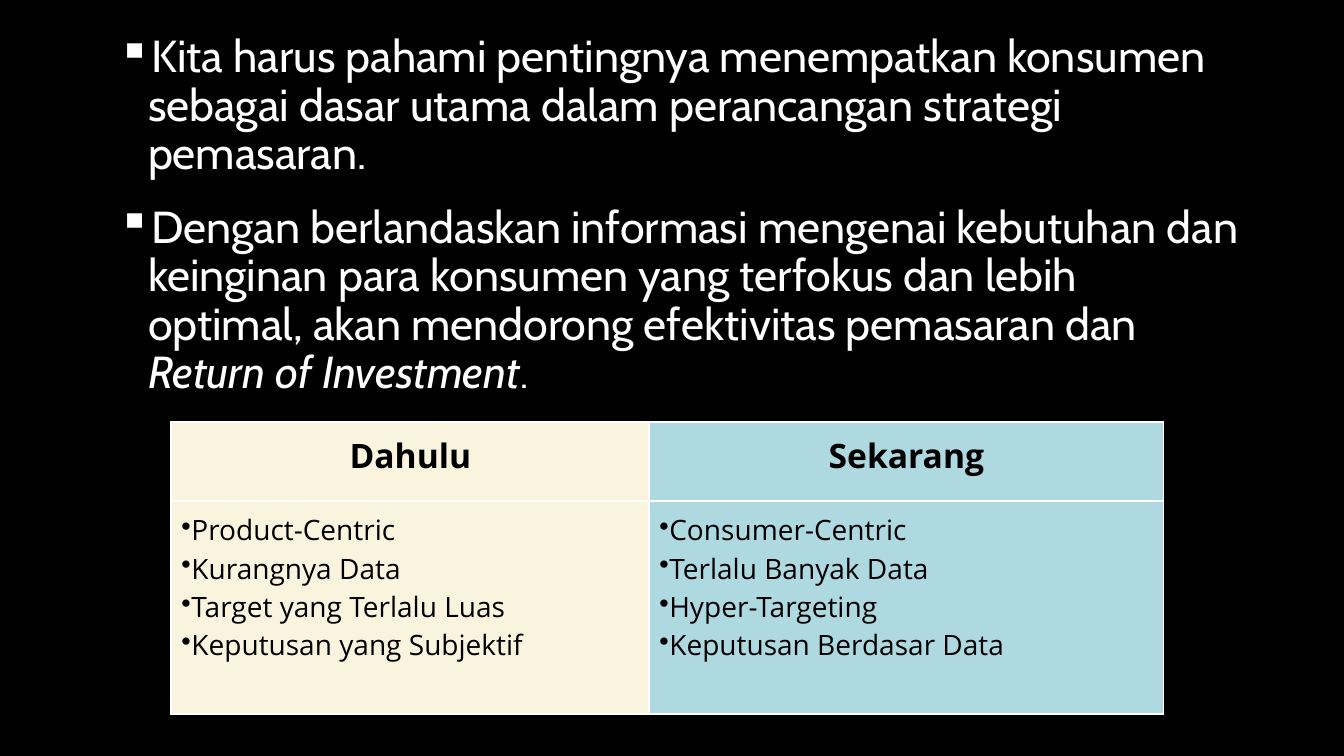
from dataclasses import dataclass

from lxml.etree import SubElement
from pptx import Presentation
from pptx.dml.color import RGBColor as Color
from pptx.enum.text import MSO_ANCHOR as Anchor, PP_ALIGN as Align
from pptx.oxml.ns import qn
from pptx.util import Inches, Pt


@dataclass(frozen=True)
class Theme:
    background: Color = Color(0, 0, 0)
    light: Color = Color(255, 255, 255)
    dark: Color = Color(0, 0, 0)
    cream: Color = Color(0xFA, 0xF3, 0xDD)
    aqua: Color = Color(0xAE, 0xD9, 0xE0)
    body_font: str = "Cabin"
    table_font: str = "Open Sans"
    body_size: int = 32
    stop_size: int = 28
    heading_size: int = 24
    item_size: int = 20
    border_width: float = 1.5


@dataclass(frozen=True)
class Span:
    text: str
    italic: bool = False
    size: int | None = None


@dataclass(frozen=True)
class Era:
    heading: str
    items: tuple[str, ...]
    fill: Color
    width: float


THEME = Theme()

POINTS = (
    (Span("Kita harus pahami pentingnya menempatkan konsumen sebagai dasar utama "
          "dalam perancangan strategi pemasaran."),),
    (Span("Dengan berlandaskan informasi mengenai kebutuhan dan keinginan para konsumen "
          "yang terfokus dan lebih optimal, akan mendorong efektivitas pemasaran dan "),
     Span("Return of Investment", italic=True),
     Span(".", size=THEME.stop_size)),
)

ERAS = (
    Era("Dahulu",
        ("Product-Centric", "Kurangnya Data", "Target yang Terlalu Luas",
         "Keputusan yang Subjektif"),
        THEME.cream, 4.74),
    Era("Sekarang",
        ("Consumer-Centric", "Terlalu Banyak Data", "Hyper-Targeting",
         "Keputusan Berdasar Data"),
        THEME.aqua, 5.1),
)

ROW_HEIGHTS = (0.78, 2.11)


def add_bullet(para, symbol: str, indent: float = 0) -> None:
    properties = para._p.get_or_add_pPr()
    properties.set("marL", str(Inches(indent)))
    properties.set("indent", str(-Inches(indent)))
    SubElement(properties, qn("a:buChar"), char=symbol)


def style_font(font, name: str, size: int, color: Color, bold: bool = False) -> None:
    font.name = name
    font.size = Pt(size)
    font.bold = bold
    font.color.rgb = color


def add_points(page, points: tuple[tuple[Span, ...], ...]) -> None:
    box = page.shapes.add_textbox(Inches(1.07), Inches(0.29), Inches(11.34), Inches(4.82))
    frame = box.text_frame
    frame.word_wrap = True
    for index, spans in enumerate(points):
        para = frame.add_paragraph() if index else frame.paragraphs[0]
        add_bullet(para, "▪", 0.3)
        para.line_spacing = 0.9
        para.space_before = Pt(18)
        style_font(para.font, THEME.body_font, THEME.body_size, THEME.light)
        for span in spans:
            run = para.add_run()
            run.text = span.text
            if span.italic:
                run.font.italic = True
            if span.size:
                run.font.size = Pt(span.size)


def add_borders(cell) -> None:
    properties = cell._tc.get_or_add_tcPr()
    for position, side in enumerate(("lnL", "lnR", "lnT", "lnB")):
        line = SubElement(properties, qn(f"a:{side}"), w=str(Pt(THEME.border_width)))
        solid = SubElement(line, qn("a:solidFill"))
        SubElement(solid, qn("a:srgbClr"), val=str(THEME.light))
        properties.insert(position, line)


def fill_cell(cell, lines: tuple[str, ...], fill: Color, heading: bool) -> None:
    cell.margin_left = cell.margin_right = Inches(0.1)
    cell.margin_top = cell.margin_bottom = Inches(0.1)
    cell.vertical_anchor = Anchor.TOP
    cell.fill.solid()
    cell.fill.fore_color.rgb = fill
    add_borders(cell)
    size = THEME.heading_size if heading else THEME.item_size
    for index, line in enumerate(lines):
        para = cell.text_frame.add_paragraph() if index else cell.text_frame.paragraphs[0]
        if heading:
            para.alignment = Align.CENTER
        else:
            add_bullet(para, "•")
        style_font(para.font, THEME.table_font, size, THEME.dark, heading)
        para.add_run().text = line


def add_comparison(page, eras: tuple[Era, ...]) -> None:
    width = sum(era.width for era in eras)
    table = page.shapes.add_table(
        len(ROW_HEIGHTS), len(eras), Inches(1.7), Inches(4.19),
        Inches(width), Inches(sum(ROW_HEIGHTS))).table
    for row, height in zip(table.rows, ROW_HEIGHTS):
        row.height = Inches(height)
    for index, era in enumerate(eras):
        table.columns[index].width = Inches(era.width)
        fill_cell(table.cell(0, index), (era.heading,), era.fill, True)
        fill_cell(table.cell(1, index), era.items, era.fill, False)


def main() -> None:
    deck = Presentation()
    deck.slide_width = Inches(13.33)
    deck.slide_height = Inches(7.5)
    page = deck.slides.add_slide(deck.slide_layouts[6])
    page.background.fill.solid()
    page.background.fill.fore_color.rgb = THEME.background
    add_points(page, POINTS)
    add_comparison(page, ERAS)
    deck.save("out.pptx")


if __name__ == "__main__":
    main()
